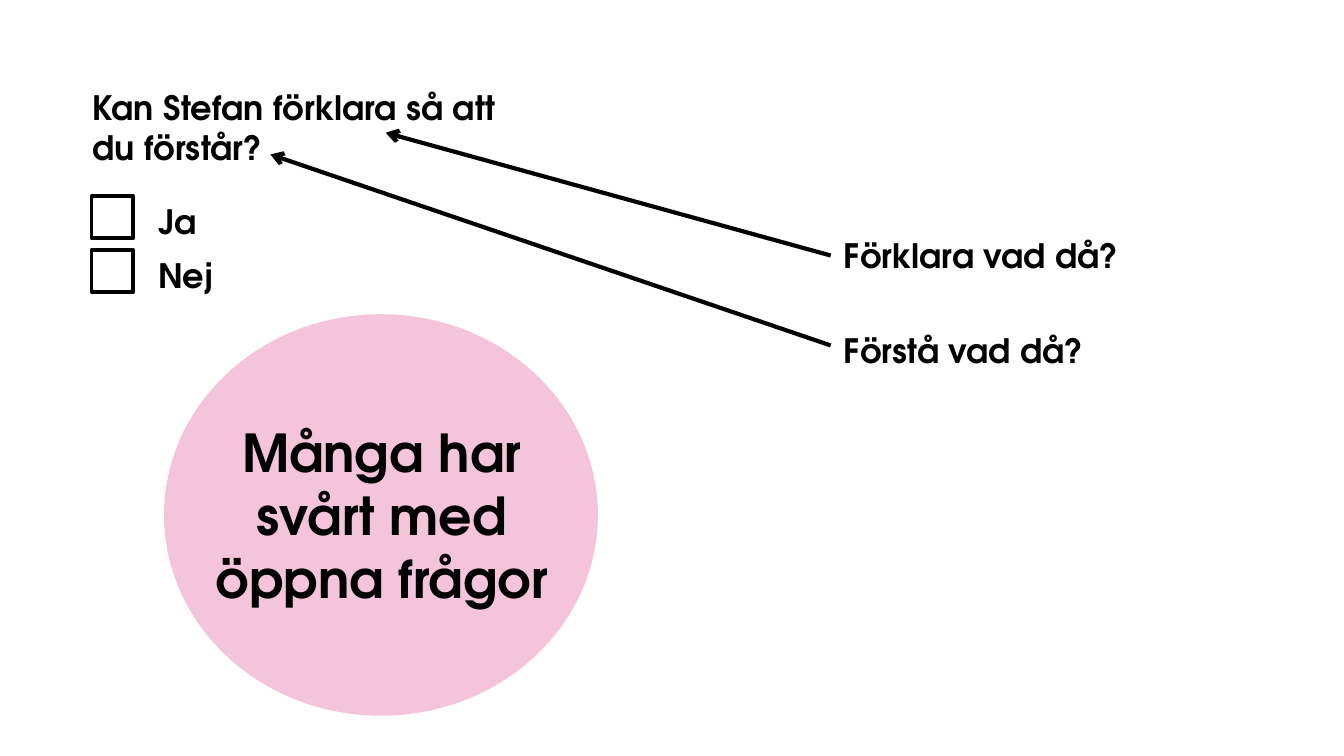
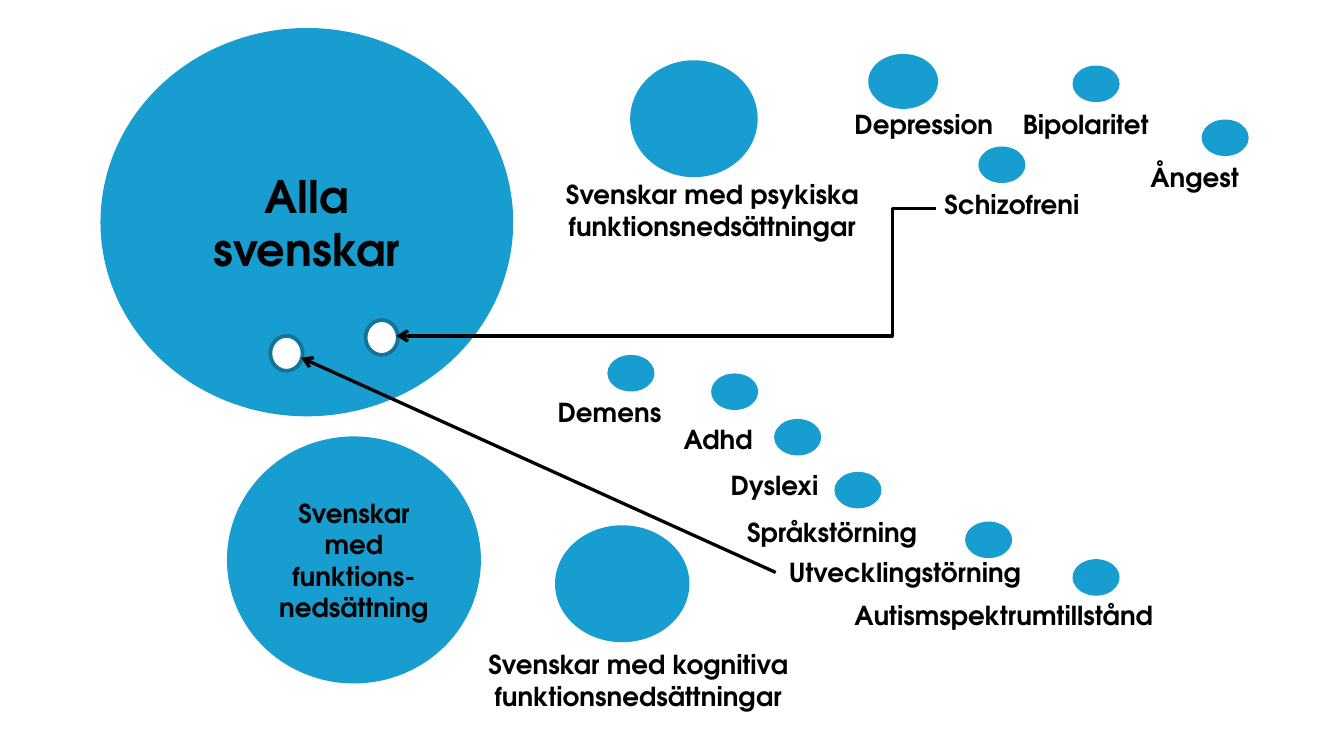
from dataclasses import dataclass

from lxml import etree
from pptx import Presentation
from pptx import util as u
from pptx.dml.color import RGBColor
from pptx.enum import shapes, text
from pptx.oxml import ns


@dataclass(frozen=True)
class Theme:
    font: str = "TeX Gyre Adventor"
    ink: str = "000000"
    paper: str = "FFFFFF"
    pink: str = "E3689E"
    blue: str = "179DCF"
    rim: str = "117499"
    label: int = 14
    body: int = 18
    heading: int = 24
    statement: int = 28
    outline: float = 2


class Sketch:
    def __init__(self, deck, theme):
        self.deck = deck
        self.theme = theme
        self.page = None

    def new_page(self):
        self.page = self.deck.slides.add_slide(self.deck.slide_layouts[6])

    def fill_frame(self, frame, words, size, centred):
        para = frame.paragraphs[0]
        para.alignment = text.PP_ALIGN.CENTER if centred else text.PP_ALIGN.LEFT
        span = para.add_run()
        span.text = words
        span.font.name = self.theme.font
        span.font.size = u.Pt(size)
        span.font.bold = True
        span.font.color.rgb = RGBColor.from_string(self.theme.ink)

    def label(self, words, left, top, width, height, size, centred=False, wrap=True):
        box = self.page.shapes.add_textbox(*map(u.Cm, (left, top, width, height)))
        frame = box.text_frame
        frame.word_wrap = wrap
        frame.auto_size = text.MSO_AUTO_SIZE.SHAPE_TO_FIT_TEXT
        self.fill_frame(frame, words, size, centred)
        return box

    def shape(self, kind, left, top, width, height, fill, line=None, opacity=None):
        shape = self.page.shapes.add_shape(kind, *map(u.Cm, (left, top, width, height)))
        shape.shadow.inherit = False
        shape.fill.solid()
        shape.fill.fore_color.rgb = RGBColor.from_string(fill)
        if opacity:
            colour = shape._element.spPr.find(".//" + ns.qn("a:srgbClr"))
            etree.SubElement(colour, ns.qn("a:alpha"), val=str(opacity * 1000))
        if line:
            shape.line.color.rgb = RGBColor.from_string(line)
            shape.line.width = u.Pt(self.theme.outline)
        else:
            shape.line.fill.background()
        return shape

    def circle(self, left, top, width, height, fill, line=None, opacity=None):
        return self.shape(shapes.MSO_SHAPE.OVAL, left, top, width, height, fill, line, opacity)

    def captioned_circle(self, words, left, top, width, height, size):
        circle = self.circle(left, top, width, height, self.theme.blue)
        circle.text_frame.vertical_anchor = text.MSO_ANCHOR.MIDDLE
        self.fill_frame(circle.text_frame, words, size, True)

    def arrow(self, start, end, weight, source=None, bend=None):
        kind = shapes.MSO_CONNECTOR.ELBOW if bend else shapes.MSO_CONNECTOR.STRAIGHT
        arrow = self.page.shapes.add_connector(kind, *map(u.Cm, (*start, *end)))
        if source is not None:
            arrow.begin_connect(source, 1)
        arrow.line.color.rgb = RGBColor.from_string(self.theme.ink)
        arrow.line.width = u.Pt(weight)
        properties = arrow._element.spPr
        outline = properties.find(ns.qn("a:ln"))
        etree.SubElement(outline, ns.qn("a:tailEnd"), type="arrow")
        etree.SubElement(properties, ns.qn("a:effectLst"))
        if bend:
            guides = properties.find(".//" + ns.qn("a:avLst"))
            etree.SubElement(guides, ns.qn("a:gd"), name="adj1", fmla=f"val {bend}")


def open_question(sketch):
    theme = sketch.theme
    sketch.new_page()
    sketch.circle(3.1, 5.94, 8.2, 7.59, theme.pink, opacity=38)
    sketch.label("Kan Stefan förklara så att du förstår?", 1.5, 1.52, 8.2, 1.8, theme.body)

    row_step = 1.02
    for row, (answer, width) in enumerate((("Ja", 1.24), ("Nej", 1.57))):
        offset = row * row_step
        sketch.shape(shapes.MSO_SHAPE.RECTANGLE, 1.73, 3.71 + offset, 0.79, 0.79,
                     theme.paper, theme.ink)
        sketch.label(answer, 2.74, 3.68 + offset, width, 1.02, theme.body, wrap=False)

    explain = sketch.label("Förklara vad då?", 15.7, 4.32, 6.25, 1.02, theme.body)
    sketch.arrow((15.7, 4.83), (7.29, 2.51), 2.25, source=explain)
    sketch.label("Förstå vad då?", 15.7, 6.12, 5.59, 1.02, theme.body)
    sketch.arrow((15.7, 6.53), (5.11, 2.92), 2.25)
    sketch.label("Många har svårt med öppna frågor", 3.71, 7.82, 7.01, 3.84,
                 theme.statement, centred=True)


def population(sketch):
    theme = sketch.theme
    sketch.new_page()
    sketch.captioned_circle("Alla svenskar", 1.9, 0.53, 7.8, 7.34, theme.heading)
    sketch.captioned_circle("Svenskar med funktions-nedsättning", 4.29, 8.25, 4.8, 4.67,
                            theme.label)

    groups = (
        ("kognitiva", (10.49, 9.93, 2.54, 2.21), (8.89, 12.14, 6.35, 1.5)),
        ("psykiska", (11.91, 1.14, 2.41, 2.21), (10.29, 3.25, 6.35, 1.45)),
    )
    for kind, circle, caption in groups:
        sketch.circle(*circle, theme.blue)
        sketch.label(f"Svenskar med {kind} funktionsnedsättningar", *caption,
                     theme.label, centred=True)

    dot = (0.89, 0.69)
    large_dot = (1.32, 1.04)
    diagnoses = (
        ("Demens", 10.29, 7.37, 2.49, (11.48, 6.71), dot),
        ("Adhd", 12.67, 7.87, 1.83, (13.44, 7.06), dot),
        ("Dyslexi", 13.56, 8.74, 2.21, (14.63, 7.92), dot),
        ("Språkstörning", 13.87, 9.63, 3.78, (15.77, 8.92), dot),
        ("Utvecklingstörning", 14.66, 10.39, 4.95, (18.24, 9.86), dot),
        ("Autismspektrumtillstånd", 15.9, 11.2, 6.22, (20.27, 10.57), dot),
        ("Depression", 15.9, 1.93, 3.18, (16.41, 1.02), large_dot),
        ("Bipolaritet", 19.08, 1.93, 2.92, (20.27, 1.24), dot),
        ("Ångest", 21.49, 2.92, 2.21, (22.71, 2.26), dot),
        ("Schizofreni", 17.6, 3.43, 3.1, (18.49, 2.77), dot),
    )
    labels = {}
    for name, left, top, width, place, size in diagnoses:
        labels[name] = sketch.label(name, left, top, width, 0.86, theme.label, wrap=False)
        sketch.circle(*place, *size, theme.blue)

    for left, top in ((6.91, 6.05), (5.11, 6.35)):
        sketch.circle(left, top, 0.61, 0.66, theme.paper, theme.rim)
    sketch.arrow((17.7, 3.94), (7.49, 6.35), 1.75, bend=8200)
    sketch.arrow((14.66, 10.82), (5.69, 6.76), 1.75, source=labels["Utvecklingstörning"])


def main():
    deck = Presentation()
    deck.slide_width = u.Cm(25.4)
    deck.slide_height = u.Cm(14.29)
    sketch = Sketch(deck, Theme())
    open_question(sketch)
    population(sketch)
    deck.save("out.pptx")


if __name__ == "__main__":
    main()
